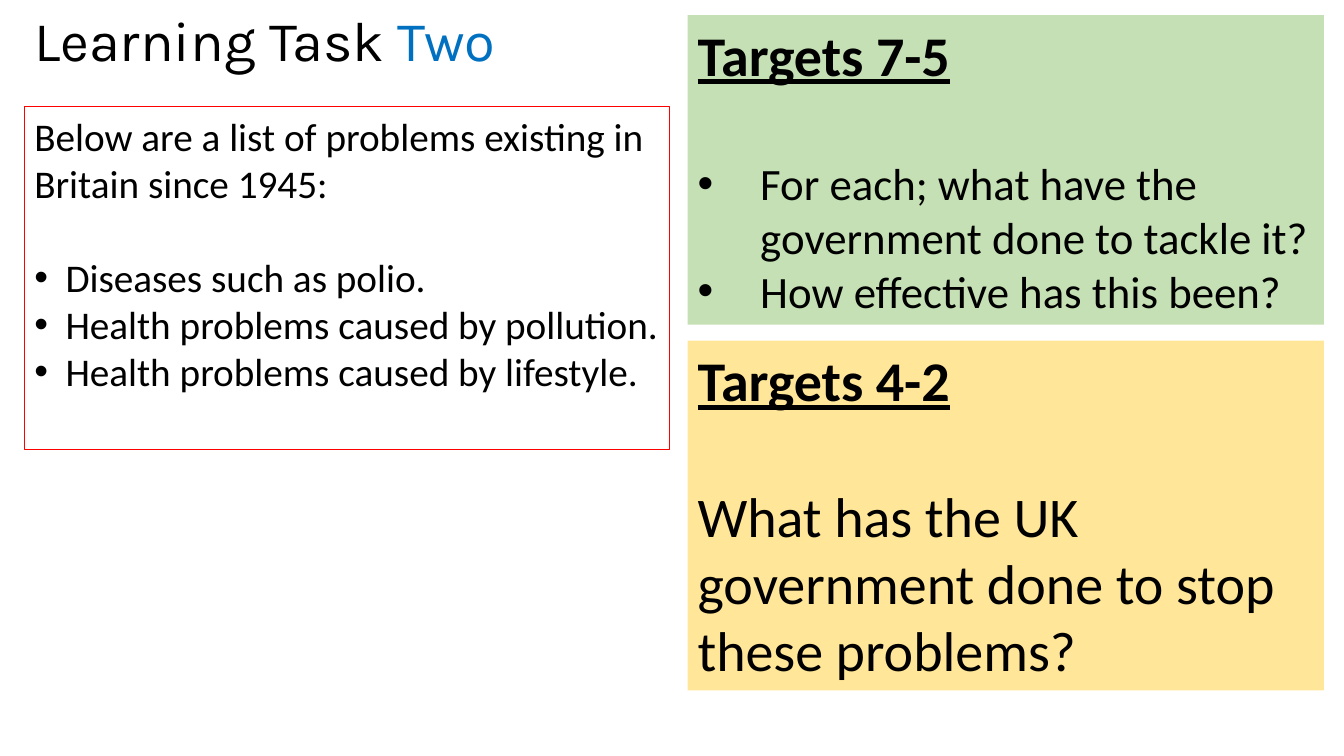
"""Build the Learning Task Two slide with its problem list and target panels."""
from dataclasses import dataclass

from lxml.etree import SubElement
from pptx import Presentation
from pptx.dml.color import RGBColor
from pptx.enum.shapes import MSO_SHAPE
from pptx.enum.text import MSO_ANCHOR, MSO_AUTO_SIZE, PP_ALIGN
from pptx.oxml.ns import qn
from pptx.util import Inches, Pt


@dataclass(frozen=True)
class Theme:
    title_font: str = "Karla"
    body_font: str = "Calibri"
    ink: str = "000000"
    accent: str = "0070C0"
    border: str = "FF0000"
    green: str = "C5E0B4"
    yellow: str = "FFE699"
    heading_size: int = 40
    list_size: int = 28
    target_size: int = 32
    border_width: float = 0.75


@dataclass(frozen=True)
class Box:
    left: float
    top: float
    width: float
    height: float


@dataclass(frozen=True)
class Line:
    text: str
    size: int
    indent: float = 0
    heading: bool = False
    gap: float = 0


@dataclass(frozen=True)
class Panel:
    box: Box
    lines: tuple[Line, ...]
    fill: str | None = None
    border: str | None = None


THEME = Theme()
TITLE_BOX = Box(0.24, 0, 7.25, 0.77)
TITLE_PARTS = (("Learning Task ", THEME.ink), ("Two", THEME.accent))
LIST_GAP = 34
HEADING_GAP = 49
LIST_INDENT = 0.31
TARGET_INDENT = 0.62

PROBLEMS = Panel(
    Box(0.24, 1.06, 6.4, 3.4),
    (
        Line("Below are a list of problems existing in Britain since 1945:", THEME.list_size),
        Line("Diseases such as polio.", THEME.list_size, LIST_INDENT, gap=LIST_GAP),
        Line("Health problems caused by pollution.", THEME.list_size, LIST_INDENT),
        Line("Health problems caused by lifestyle.", THEME.list_size, LIST_INDENT),
    ),
    border=THEME.border,
)
HIGHER_TARGETS = Panel(
    Box(6.82, 0.15, 6.31, 3.07),
    (
        Line("Targets 7-5", THEME.heading_size, heading=True),
        Line("For each; what have the government done to tackle it?",
             THEME.target_size, TARGET_INDENT, gap=HEADING_GAP),
        Line("How effective has this been?", THEME.target_size, TARGET_INDENT),
    ),
    fill=THEME.green,
)
LOWER_TARGETS = Panel(
    Box(6.82, 3.38, 6.31, 3.47),
    (
        Line("Targets 4-2", THEME.heading_size, heading=True),
        Line("What has the UK government done to stop these problems?",
             THEME.heading_size, gap=HEADING_GAP),
    ),
    fill=THEME.yellow,
)


def place(shape, box: Box) -> None:
    """Move a shape to its box and set its text to start at the top."""
    shape.left, shape.top = Inches(box.left), Inches(box.top)
    shape.width, shape.height = Inches(box.width), Inches(box.height)
    frame = shape.text_frame
    frame.word_wrap = True
    frame.auto_size = MSO_AUTO_SIZE.NONE
    frame.vertical_anchor = MSO_ANCHOR.TOP


def style_run(run, font: str, size: int, color: str, heading: bool = False) -> None:
    """Give a run its typeface, size, colour and heading emphasis."""
    run.font.name = font
    run.font.size = Pt(size)
    run.font.color.rgb = RGBColor.from_string(color)
    run.font.bold = heading
    run.font.underline = heading


def set_bullet(paragraph, indent: float) -> None:
    """Give a paragraph a hanging bullet, or none when it has no indent."""
    properties = paragraph._p.get_or_add_pPr()
    properties.set("marL", str(Inches(indent)))
    properties.set("indent", str(-Inches(indent)))
    if indent:
        SubElement(properties, qn("a:buFont"), typeface="Arial")
        SubElement(properties, qn("a:buChar"), char="•")
    else:
        SubElement(properties, qn("a:buNone"))


def draw_title(title) -> None:
    """Write the two-colour title."""
    place(title, TITLE_BOX)
    paragraph = title.text_frame.paragraphs[0]
    paragraph.alignment = PP_ALIGN.LEFT
    for text, color in TITLE_PARTS:
        run = paragraph.add_run()
        run.text = text
        style_run(run, THEME.title_font, THEME.heading_size, color)


def draw_panel(shape, panel: Panel) -> None:
    """Paint a panel and write its lines."""
    place(shape, panel.box)
    shape.shadow.inherit = False
    if panel.fill:
        shape.fill.solid()
        shape.fill.fore_color.rgb = RGBColor.from_string(panel.fill)
    else:
        shape.fill.background()
    if panel.border:
        shape.line.color.rgb = RGBColor.from_string(panel.border)
        shape.line.width = Pt(THEME.border_width)
    else:
        shape.line.fill.background()
    frame = shape.text_frame
    frame.text = "\n".join(line.text for line in panel.lines)
    for paragraph, line in zip(frame.paragraphs, panel.lines):
        set_bullet(paragraph, line.indent)
        paragraph.alignment = PP_ALIGN.LEFT
        paragraph.space_before = Pt(line.gap)
        style_run(paragraph.runs[0], THEME.body_font, line.size, THEME.ink, line.heading)


def main() -> None:
    """Build and save the slide."""
    deck = Presentation()
    deck.slide_width, deck.slide_height = Inches(13.33), Inches(7.5)
    slide = deck.slides.add_slide(deck.slide_layouts.get_by_name("Two Content"))
    draw_title(slide.shapes.title)
    draw_panel(slide.placeholders[1], PROBLEMS)
    draw_panel(slide.placeholders[2], HIGHER_TARGETS)
    lower = slide.shapes.add_shape(MSO_SHAPE.RECTANGLE, 0, 0, Inches(1), Inches(1))
    draw_panel(lower, LOWER_TARGETS)
    deck.save("out.pptx")


if __name__ == "__main__":
    main()
